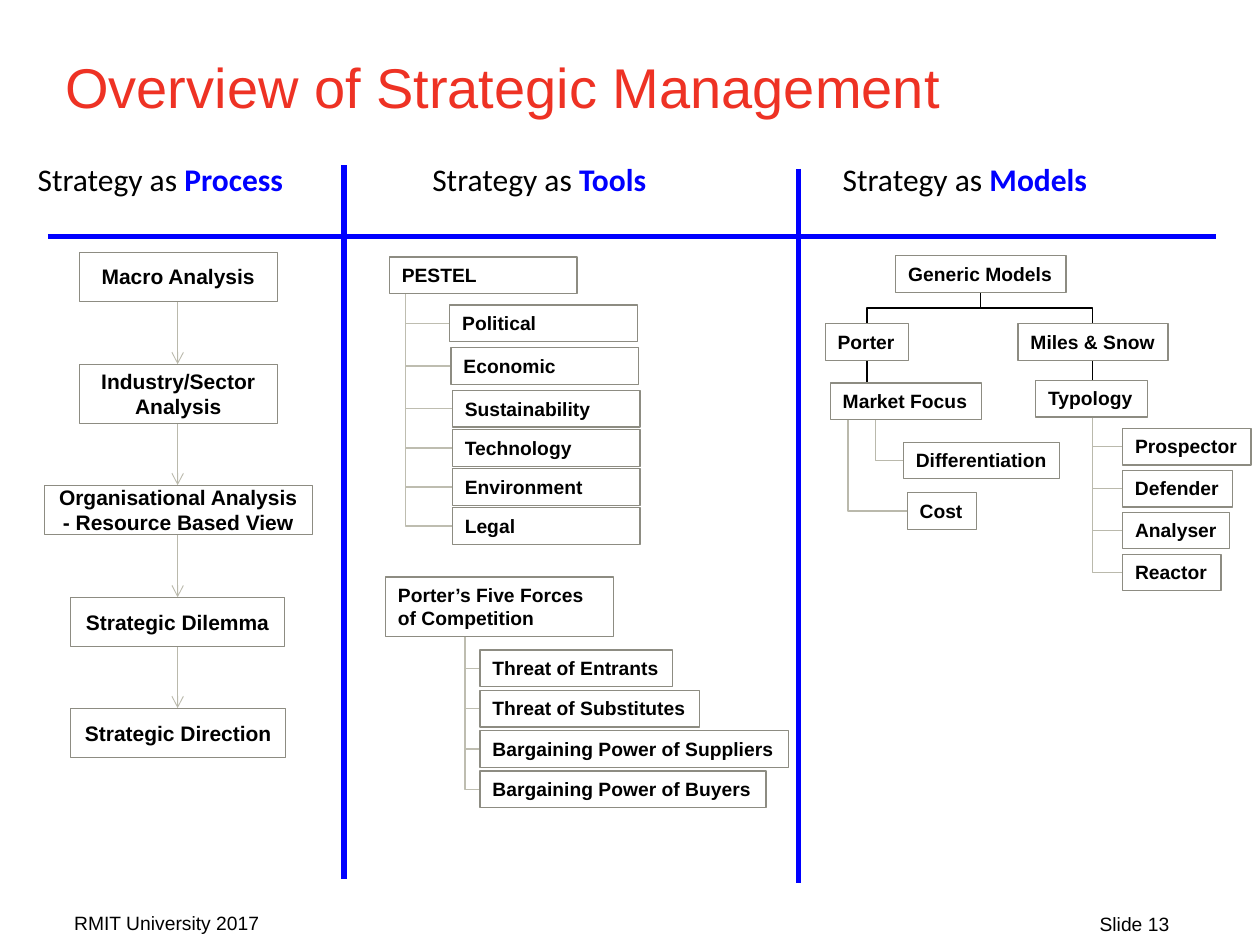
"""Build the strategic management overview slide."""
from dataclasses import dataclass

from lxml import etree
from pptx import Presentation
from pptx.dml.color import RGBColor
from pptx.enum.shapes import MSO_CONNECTOR, MSO_SHAPE
from pptx.enum.text import MSO_ANCHOR, MSO_AUTO_SIZE, PP_ALIGN
from pptx.oxml.ns import qn
from pptx.util import Inches, Pt

RECT = MSO_SHAPE.RECTANGLE
LINE, ELBOW = MSO_CONNECTOR.STRAIGHT, MSO_CONNECTOR.ELBOW
LEFT, MID, RIGHT = PP_ALIGN.LEFT, PP_ALIGN.CENTER, PP_ALIGN.RIGHT
TOP, CENTER = MSO_ANCHOR.TOP, MSO_ANCHOR.MIDDLE
GROW, FIXED = MSO_AUTO_SIZE.SHAPE_TO_FIT_TEXT, MSO_AUTO_SIZE.NONE

COLORS = {
    "red": "EE3224", "blue": "0000FF", "black": "000000", "white": "FFFFFF",
    "edge": "8D8C82", "link": "BAB9AC", "tool": "BEBDB0",
}


@dataclass
class Run:
    """A piece of text in one style."""
    text: str
    size: float
    color: str = "black"
    bold: bool = False
    font: str = "Arial"


@dataclass
class Box:
    """A framed label."""
    text: str
    x: float
    y: float
    w: float
    h: float = 0.29
    fill: bool = False
    wrap: bool = False
    flow: bool = False


@dataclass
class Head:
    """A column heading."""
    word: str
    x: float
    w: float
    align: PP_ALIGN
    wrap: bool


@dataclass
class Tree:
    """A trunk with a branch to each box."""
    x: float
    y: float
    color: str
    kids: list[Box]


FLOW = [
    Box("Macro Analysis", 0.63, 2, 1.57, 0.39, True, True, True),
    Box("Industry/Sector Analysis", 0.63, 2.89, 1.57, 0.47, True, True, True),
    Box("Organisational Analysis\n- Resource Based View", 0.35, 3.85, 2.13, 0.39, True, True, True),
    Box("Strategic Dilemma", 0.56, 4.74, 1.7, 0.39, True, True, True),
    Box("Strategic Direction", 0.56, 5.62, 1.71, 0.39, True, True, True),
]
FACTORS = [
    Box(text, x, y, 1.49, fill=True, wrap=True)
    for text, x, y in [
        ("Political", 3.57, 2.42), ("Economic", 3.58, 2.76), ("Sustainability", 3.59, 3.1),
        ("Technology", 3.59, 3.41), ("Environment", 3.59, 3.72), ("Legal", 3.59, 4.03),
    ]
]
FORCES = [
    Box(text, 3.81, 5.16 + 0.32 * i, w)
    for i, (text, w) in enumerate([
        ("Threat of Entrants", 1.53), ("Threat of Substitutes", 1.74),
        ("Bargaining Power of Suppliers", 2.45), ("Bargaining Power of Buyers", 2.27),
    ])
]
TYPES = [
    Box(text, 8.91, 3.4 + 0.333 * i, w)
    for i, (text, w) in enumerate([
        ("Prospector", 1.02), ("Defender", 0.87), ("Analyser", 0.85), ("Reactor", 0.78),
    ])
]
TREES = [
    Tree(3.22, 2.33, "tool", FACTORS),
    Tree(3.69, 5.05, "tool", FORCES),
    Tree(8.67, 3.31, "link", TYPES),
    Tree(6.95, 3.33, "link", [Box("Differentiation", 7.17, 3.51, 1.24)]),
    Tree(6.73, 3.33, "link", [Box("Cost", 7.2, 3.91, 0.55)]),
]
PARENTS = [
    Box("PESTEL", 3.09, 2.04, 1.49, fill=True, wrap=True),
    Box("Porter’s Five Forces of Competition", 3.06, 4.58, 1.81, 0.47, True, True),
    Box("Generic Models", 7.11, 2.03, 1.35),
    Box("Porter", 6.55, 2.57, 0.66),
    Box("Miles & Snow", 8.08, 2.57, 1.19),
    Box("Market Focus", 6.59, 3.04, 1.2, fill=True),
    Box("Typology", 8.22, 3.02, 0.89),
]
HEADS = [
    Head("Process", 0.2, 2.51, LEFT, True),
    Head("Tools", 3.18, 2.2, MID, True),
    Head("Models", 6.59, 2.14, LEFT, False),
]


def tint(name: str) -> RGBColor:
    """Return a named colour."""
    return RGBColor.from_string(COLORS[name])


def write(shape, lines: list[list[Run]], align=LEFT, anchor=TOP, wrap=True, size=FIXED):
    """Fill a shape with lines of runs."""
    frame = shape.text_frame
    frame.word_wrap, frame.auto_size, frame.vertical_anchor = wrap, size, anchor
    for i, runs in enumerate(lines):
        para = frame.add_paragraph() if i else frame.paragraphs[0]
        para.alignment = align
        for item in runs:
            run = para.add_run()
            run.text = item.text
            font = run.font
            font.name, font.size, font.bold = item.font, Pt(item.size), item.bold
            font.color.rgb = tint(item.color)


def label(slide, x: float, y: float, w: float, h: float, runs: list[Run], **style):
    """Add a plain text box."""
    shape = slide.shapes.add_textbox(Inches(x), Inches(y), Inches(w), Inches(h))
    write(shape, [runs], **style)
    return shape


def draw_box(slide, box: Box):
    """Draw a framed label."""
    shape = slide.shapes.add_shape(RECT, Inches(box.x), Inches(box.y), Inches(box.w), Inches(box.h))
    shape.shadow.inherit = False
    if box.fill:
        shape.fill.solid()
        shape.fill.fore_color.rgb = tint("white")
    else:
        shape.fill.background()
    shape.line.color.rgb = tint("edge")
    shape.line.width = Pt(0.5 if box.flow else 0.75)
    lines = [[Run(text, 12 if box.flow else 11, bold=True)] for text in box.text.split("\n")]
    if box.flow:
        write(shape, lines, MID, CENTER)
    else:
        write(shape, lines, wrap=box.wrap, size=GROW)


def join(slide, x1: float, y1: float, x2: float, y2: float, color: str,
         width: float = 0.75, kind=LINE, arrow: bool = False):
    """Draw a connector between two points."""
    link = slide.shapes.add_connector(kind, Inches(x1), Inches(y1), Inches(x2), Inches(y2))
    link.line.color.rgb = tint(color)
    link.line.width = Pt(width)
    props = link._element.spPr
    if arrow:
        etree.SubElement(props.find(qn("a:ln")), qn("a:tailEnd"), type="arrow")
    etree.SubElement(props, qn("a:effectLst"))
    return link


def bend(slide, x1: float, y1: float, x2: float, y2: float, color: str, preset: str):
    """Draw an elbow that leaves its start downward."""
    mid_x, mid_y = (x1 + x2) / 2, (y1 + y2) / 2
    half_w, half_h = (y2 - y1) / 2, abs(x2 - x1) / 2
    link = join(slide, mid_x - half_w, mid_y - half_h, mid_x + half_w, mid_y + half_h,
                color, kind=ELBOW)
    props = link._element.spPr
    props.find(qn("a:prstGeom")).set("prst", preset)
    link.rotation = 270 if x2 > x1 else 90
    if x2 > x1:
        props.find(qn("a:xfrm")).set("flipH", "1")


def main():
    """Build and save the slide."""
    deck = Presentation()
    deck.slide_width, deck.slide_height = Inches(10), Inches(7.5)
    slide = deck.slides.add_slide(deck.slide_layouts[6])
    title = label(slide, 0.42, 0.3, 9, 1.01, [Run("Overview of Strategic Management", 32, "red")])
    title.text_frame.margin_top = Inches(0.12)
    for head in HEADS:
        runs = [Run("Strategy as ", 18, font="Calibri"),
                Run(head.word, 18, "blue", True, "Calibri")]
        label(slide, head.x, 1.22, head.w, 0.4, runs, align=head.align, wrap=head.wrap, size=GROW)
    for ends in [(0.38, 1.88, 9.65, 1.88), (2.73, 1.31, 2.73, 6.98), (6.34, 1.34, 6.34, 7.01)]:
        join(slide, *ends, "blue", 3)
    for above, below in zip(FLOW, FLOW[1:]):
        join(slide, 1.41, above.y + above.h, 1.41, below.y, "link", 0.5, arrow=True)
    for tree in TREES:
        for kid in tree.kids:
            bend(slide, tree.x, tree.y, kid.x, kid.y + kid.h / 2, tree.color, "bentConnector2")
    for x, top, low in [(6.88, 2.86, 3.04), (8.67, 2.86, 3.02)]:
        bend(slide, 7.78, 2.32, x, 2.57, "black", "bentConnector3")
        join(slide, x, top, x, low, "black")
    for box in FLOW + PARENTS + [kid for tree in TREES for kid in tree.kids]:
        draw_box(slide, box)
    label(slide, 0.49, 7.18, 2.33, 0.24, [Run("RMIT University 2017", 11)])
    label(slide, 7.05, 7.19, 2.33, 0.24, [Run("Slide 13", 11)], align=RIGHT)
    deck.save("out.pptx")


if __name__ == "__main__":
    main()
